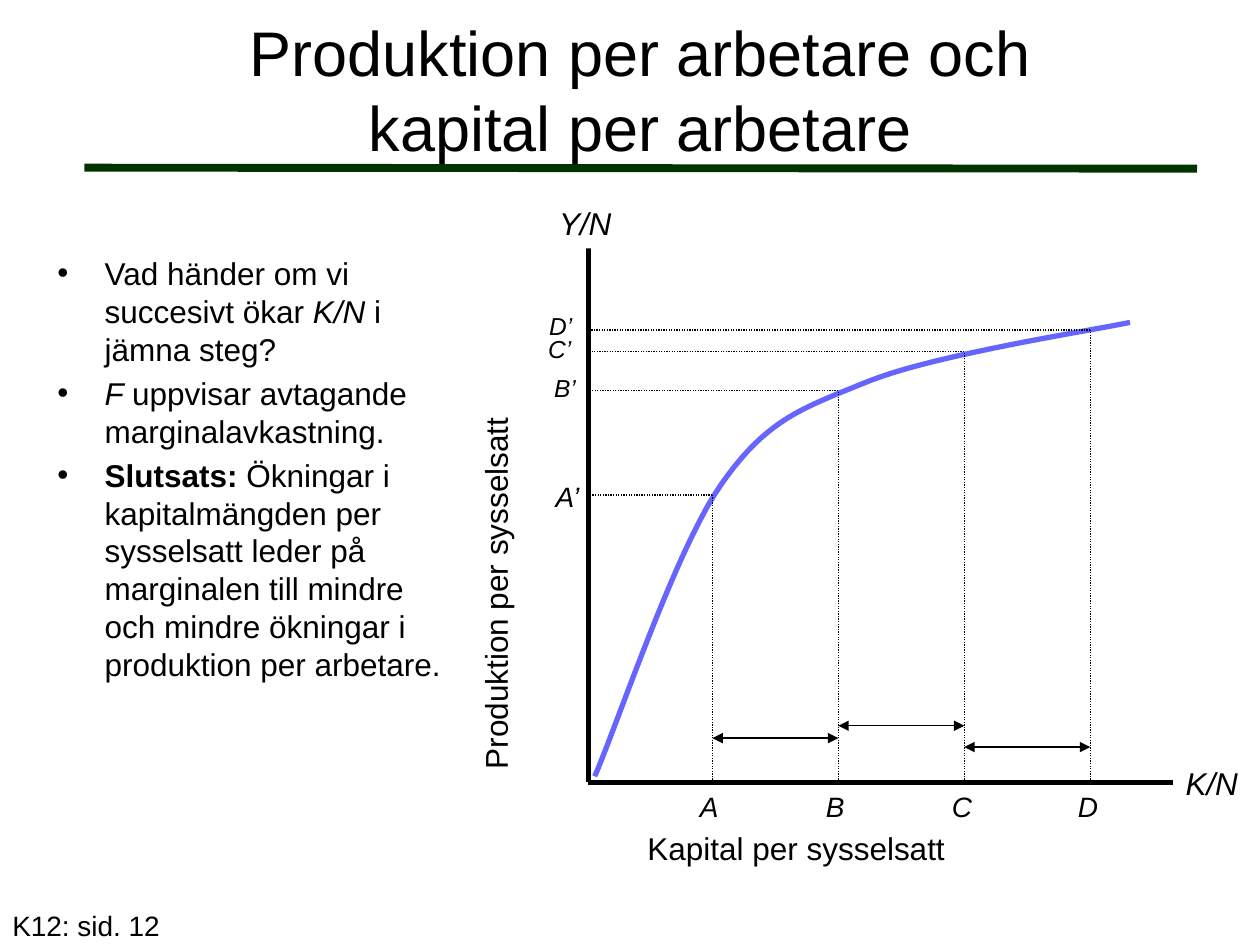
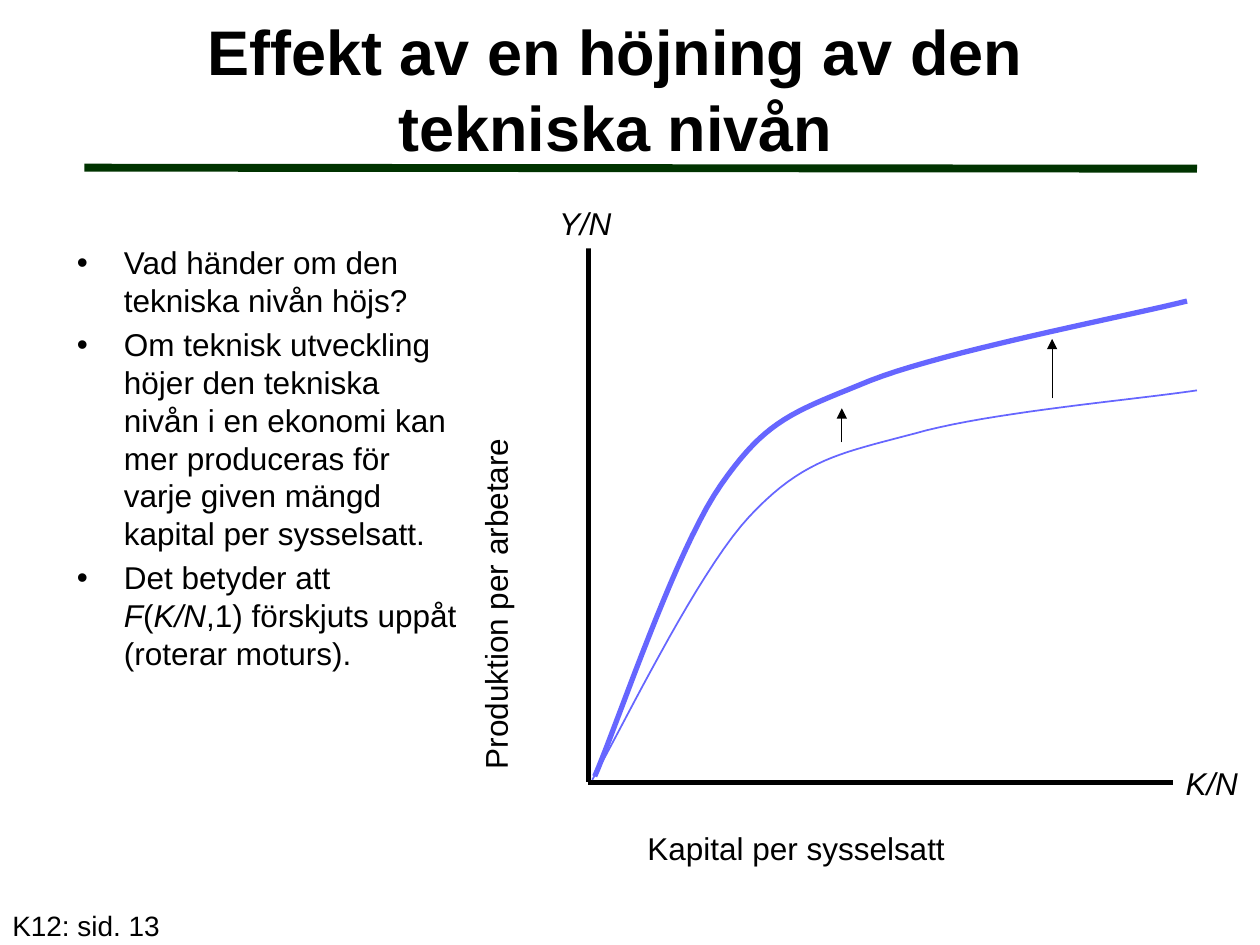
from itertools import pairwise

from lxml.etree import SubElement as Sub
from pptx import Presentation
from pptx.dml.color import RGBColor as RGB
from pptx.enum.dml import MSO_LINE as Dash
from pptx.enum.shapes import MSO_CONNECTOR as Conn
from pptx.enum.text import MSO_ANCHOR as Anchor, PP_ALIGN as Align
from pptx.oxml.ns import qn
from pptx.util import Cm, Pt

FONT = "Arial"
BLACK, WHITE, GREEN, BLUE = "000000", "FFFFFF", "003300", "6666FF"

# Diagram frame, in cm
LEFT, TOP, RIGHT, BASE = 11.86, 4.98, 24.13, 15.77

# Curves: a start point, then three Bezier points per piece
START = [(11.99, 15.65), (12.42, 14.68), (13.61, 11.1), (14.53, 9.78), (15.47, 8.43)]
OUTPUT = START + [(16.18, 8.23), (17.55, 7.67), (18.92, 7.14), (21.92, 6.68), (22.78, 6.5)]
HIGH = START + [(16, 8.31), (17.55, 7.67), (19.13, 7.06), (22.61, 6.4), (23.93, 6.07)]
LOW = [(11.94, 15.72), (12.47, 14.83), (14.02, 11.58), (15.11, 10.41), (16.2, 9.25),
       (16.94, 9.14), (18.44, 8.74), (19.94, 8.31), (22.96, 8.05), (24.13, 7.87)]

# Steps of capital: name, curve height, left and top of the output label, its size
FIRST, STEP = 14.36, 2.54
MARKS = [("A", 9.98, 10.95, 9.55, 16), ("B", 7.87, 10.92, 7.39, 14),
         ("C", 7.09, 10.8, 6.6, 14), ("D", 6.65, 10.82, 6.15, 14)]
SPANS = [14.88, 14.63, 15.06]

# Bullets: each a list of (text, style) runs
STEPS = [
    [("Vad händer om vi succesivt ökar ", ""), ("K/N", "i"), (" i jämna steg?", "")],
    [("F ", "i"), ("uppvisar avtagande marginalavkastning.", "")],
    [("Slutsats: ", "b"),
     ("Ökningar i kapitalmängden per sysselsatt leder på marginalen till mindre "
      "och mindre ökningar i produktion per arbetare.", "")],
]
TECH = [
    [("Vad händer om den tekniska nivån höjs?", "")],
    [("Om teknisk utveckling höjer den tekniska nivån i en ekonomi kan mer "
      "produceras för varje given mängd kapital per sysselsatt.", "")],
    [("Det betyder att ", ""), ("F", "i"), ("(", ""), ("K/N", "i"),
     (",1) förskjuts uppåt (roterar moturs).", "")],
]


def color(code):
    return RGB.from_string(code)


def place(shape, *box):
    shape.left, shape.top, shape.width, shape.height = map(Cm, box)


def add_run(para, text, size, style=""):
    run = para.add_run()
    run.text = text
    font = run.font
    font.name, font.size = FONT, Pt(size)
    font.bold, font.italic = "b" in style, "i" in style
    font.color.rgb = color(BLACK)


def add_text(slide, text, box, size=18, style="", wrap=True):
    shape = slide.shapes.add_textbox(*map(Cm, box))
    shape.text_frame.word_wrap = wrap
    add_run(shape.text_frame.paragraphs[0], text, size, style)
    return shape


def add_label(slide, text, box, style="", turn=0):
    shape = add_text(slide, text, box, style=style)
    shape.fill.solid()
    shape.fill.fore_color.rgb = color(WHITE)
    shape.rotation = turn


def add_list(slide, items, box):
    frame = slide.shapes.add_textbox(*map(Cm, box)).text_frame
    frame.word_wrap = True
    for i, item in enumerate(items):
        para = frame.add_paragraph() if i else frame.paragraphs[0]
        para.space_before = para.space_after = Pt(1.8)
        props = para._p.get_or_add_pPr()
        props.set("marL", str(Cm(0.95)))
        props.set("indent", str(-Cm(0.95)))
        Sub(props, qn("a:buFont"), typeface=FONT)
        Sub(props, qn("a:buChar"), char="•")
        for text, style in item:
            add_run(para, text, 18, style)


def add_line(slide, start, end, width=0.75, code=BLACK, dots=False, heads=()):
    line = slide.shapes.add_connector(Conn.STRAIGHT, *map(Cm, start + end))
    line.line.color.rgb = color(code)
    line.line.width = Pt(width)
    if dots:
        line.line.dash_style = Dash.ROUND_DOT
    for tag in heads:
        Sub(line.line._ln, qn(tag), type="triangle")
    Sub(line._element.spPr, qn("a:effectLst"))
    return line


def bend(nodes, parts=20):
    """Points along a chain of cubic Bezier pieces."""
    points = [nodes[0]]
    for i in range(0, len(nodes) - 1, 3):
        for k in range(1, parts + 1):
            t = k / parts
            u = 1 - t
            mix = (u ** 3, 3 * u * u * t, 3 * u * t * t, t ** 3)
            points.append(tuple(sum(m * v for m, v in zip(mix, axis))
                                for axis in zip(*nodes[i:i + 4])))
    return points


def add_curve(slide, nodes, width):
    first, *rest = [(Cm(x), Cm(y)) for x, y in bend(nodes)]
    pen = slide.shapes.build_freeform(*first)
    pen.add_line_segments(rest, close=False)
    curve = pen.convert_to_shape()
    curve.shadow.inherit = False
    curve.fill.background()
    curve.line.color.rgb = color(BLUE)
    curve.line.width = Pt(width)


def add_axes(slide, upright):
    add_line(slide, (LEFT, TOP), (LEFT, BASE), 3)
    add_line(slide, (RIGHT, BASE), (LEFT, BASE), 3)
    add_label(slide, upright, (4.67, 9.93, 10.64, 1.02), turn=270)
    add_label(slide, "Kapital per sysselsatt", (12.8, 16.59, 10.64, 1.02))
    add_label(slide, "Y/N", (11.02, 3.99, 1.75, 1.02), "i")
    add_label(slide, "K/N", (23.65, 15.27, 1.75, 1.02), "i")


def add_marks(slide):
    ticks = [FIRST + STEP * i for i in range(len(MARKS))]
    for x, (name, y, left, top, size) in zip(ticks, MARKS):
        add_line(slide, (x, BASE), (x, y), dots=True)
        add_line(slide, (x, y), (LEFT, y), dots=True)
        add_text(slide, name + "’", (left, top, 0.99, 0.9), size, "i", False)
        add_text(slide, name, (x - 0.5, 15.79, 0.9, 0.94), 16, "i", False)
    for (x, end), y in zip(pairwise(ticks), SPANS):
        add_line(slide, (x, y), (end, y), heads=("a:headEnd", "a:tailEnd"))


def add_page(deck, layout, title, box, style, page):
    slide = deck.slides.add_slide(layout)
    head = slide.shapes.title
    place(head, *box)
    frame = head.text_frame
    frame.word_wrap = True
    frame.vertical_anchor = Anchor.MIDDLE
    para = frame.paragraphs[0]
    para.alignment = Align.CENTER
    add_run(para, title, 36, style)
    add_text(slide, f"K12: sid. {page}", (0, 18.19, 5.28, 0.94), 16)
    return slide


def main():
    deck = Presentation()
    deck.slide_width, deck.slide_height = Cm(25.4), Cm(19.05)
    layout = deck.slide_layouts[5]

    # Capital in even steps
    slide = add_page(deck, layout, "Produktion per arbetare och kapital per arbetare",
                     (3.84, 0.2, 18.14, 3.18), "", 12)
    add_list(slide, STEPS, (0.91, 5, 8.56, 9.91))
    add_axes(slide, "Produktion per sysselsatt")
    add_curve(slide, OUTPUT, 3)
    add_marks(slide)

    # The rule under the title belongs to the shared layout
    rule = add_line(slide, (1.7, 3.38), (24.13, 3.4), 4.5, GREEN)
    layout.shapes._spTree.append(rule._element)

    # A higher level of technology
    slide = add_page(deck, layout, "Effekt av en höjning av den tekniska nivån",
                     (1.7, 0.2, 21.41, 3.15), "b", 13)
    add_list(slide, TECH, (1.3, 4.78, 8.18, 8.31))
    add_axes(slide, "Produktion per arbetare")
    add_curve(slide, LOW, 1)
    for x, y, end in [(16.97, 8.92, 8.23), (21.21, 8.03, 6.83)]:
        add_line(slide, (x, y), (x, end), heads=("a:tailEnd",))
    add_curve(slide, HIGH, 3)

    deck.save("out.pptx")


if __name__ == "__main__":
    main()
